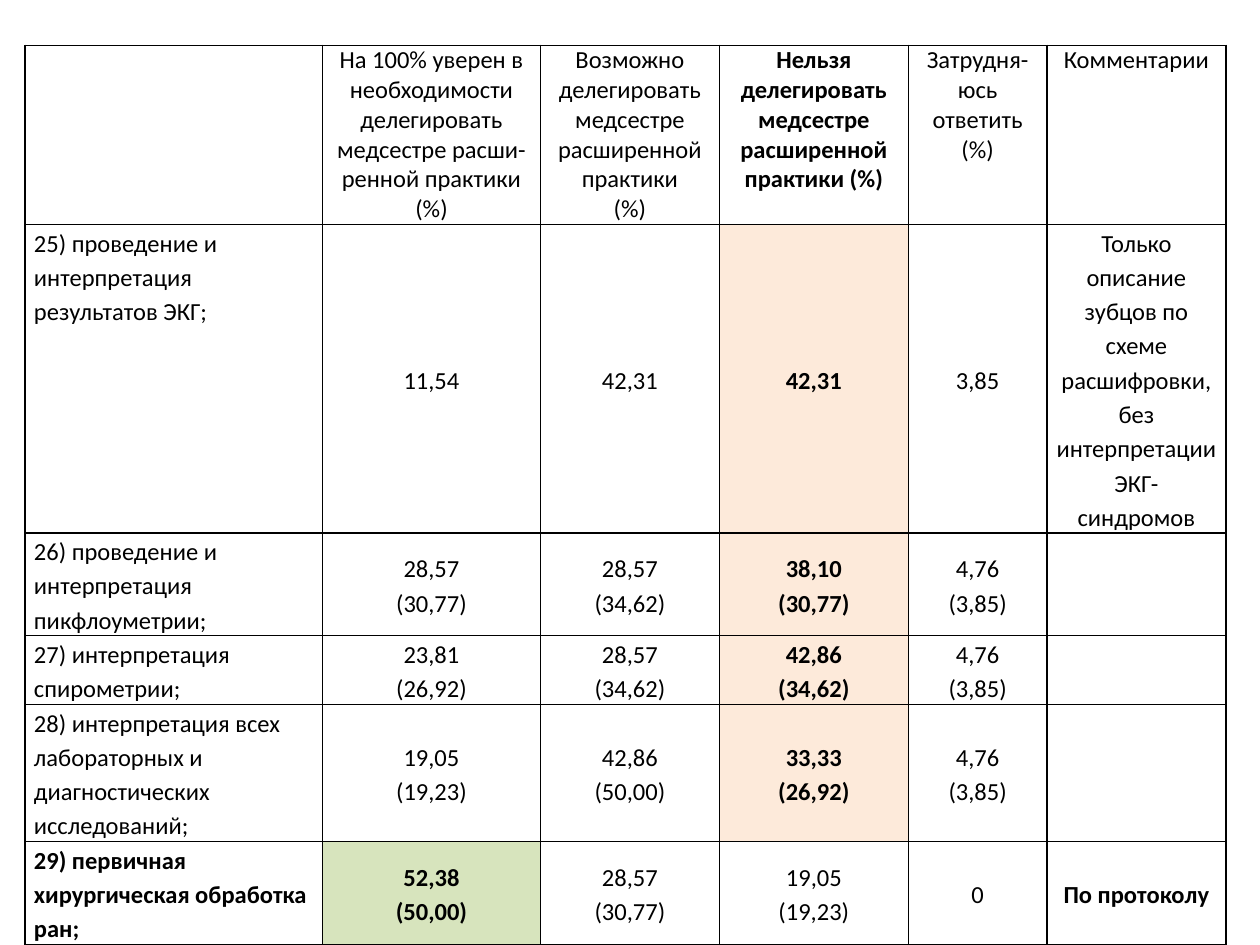
from lxml import etree
from pptx import Presentation
from pptx.dml.color import RGBColor
from pptx.enum import text
from pptx.oxml import ns
from pptx.util import Inches, Pt

BLACK, PEACH, GREEN = "000000", "FDEADA", "D7E4BD"

# Lines inside a cell are separated by "\n".
ROWS = [
    ["",
     "На 100% уверен в необходимости делегировать медсестре расши-ренной практики\n(%)",
     "Возможно делегировать медсестре расширенной практики\n(%)",
     "Нельзя делегировать медсестре расширенной практики (%)",
     "Затрудня-юсь ответить (%)",
     "Комментарии"],
    ["25) проведение и интерпретация результатов ЭКГ;",
     "11,54", "42,31", "42,31", "3,85",
     "Только описание зубцов по схеме расшифровки, без интерпретации ЭКГ-синдромов"],
    ["26) проведение и интерпретация пикфлоуметрии;",
     "28,57\n(30,77)", "28,57\n(34,62)", "38,10\n(30,77)", "4,76\n(3,85)", ""],
    ["27) интерпретация спирометрии;",
     "23,81\n(26,92)", "28,57\n(34,62)", "42,86\n(34,62)", "4,76\n(3,85)", ""],
    ["28) интерпретация всех лабораторных и диагностических исследований;",
     "19,05\n(19,23)", "42,86\n(50,00)", "33,33\n(26,92)", "4,76\n(3,85)", ""],
    ["29) первичная хирургическая обработка ран;",
     "52,38\n(50,00)", "28,57\n(30,77)", "19,05\n(19,23)", "0", "По протоколу"],
]
COLUMN_WIDTHS = [2.36, 1.73, 1.42, 1.5, 1.1, 1.42]
ROW_HEIGHTS = [1.42, 2.44, 0.81, 0.54, 1.08, 0.81]
REFUSED_COLUMN = 3
LAST_ROW = len(ROWS) - 1
FILLS = {(row, REFUSED_COLUMN): PEACH for row in range(1, LAST_ROW)}
FILLS[LAST_ROW, 1] = GREEN
BOLD = {*FILLS, (0, REFUSED_COLUMN), (LAST_ROW, 0), (LAST_ROW, 5)}


def rgb(value):
    return RGBColor.from_string(value)


def add_borders(cell):
    properties = cell._tc.get_or_add_tcPr()
    for side in ("lnL", "lnR", "lnT", "lnB"):
        line = etree.SubElement(properties, ns.qn(f"a:{side}"), w=str(Pt(1)))
        fill = etree.SubElement(line, ns.qn("a:solidFill"))
        etree.SubElement(fill, ns.qn("a:srgbClr"), val=BLACK)


def write_cell(cell, words, row, column):
    cell.margin_left = cell.margin_right = Inches(0.07)
    cell.margin_top = cell.margin_bottom = 0
    if row and column:
        cell.vertical_anchor = text.MSO_ANCHOR.MIDDLE
    for index, line in enumerate(words.split("\n")):
        frame = cell.text_frame
        para = frame.add_paragraph() if index else frame.paragraphs[0]
        para.alignment = text.PP_ALIGN.CENTER if column else text.PP_ALIGN.LEFT
        para.line_spacing = 1.15 if row else 1.0
        para.font.size = Pt(14)
        if line:
            span = para.add_run()
            span.text = line
            span.font.name = "Calibri"
            span.font.size = Pt(14)
            span.font.bold = (row, column) in BOLD
            span.font.color.rgb = rgb(BLACK)


def paint_cell(cell, color):
    if color:
        cell.fill.solid()
        cell.fill.fore_color.rgb = rgb(color)
    else:
        cell.fill.background()


def main():
    deck = Presentation()
    deck.slide_width, deck.slide_height = Inches(10), Inches(7.5)
    page = deck.slides.add_slide(deck.slide_layouts[6])
    table = page.shapes.add_table(
        len(ROWS), len(COLUMN_WIDTHS), Inches(0.2), Inches(0.36),
        Inches(sum(COLUMN_WIDTHS)), Inches(sum(ROW_HEIGHTS))).table
    table.first_row = table.horz_banding = False
    for column, width in zip(table.columns, COLUMN_WIDTHS):
        column.width = Inches(width)
    for row, height in zip(table.rows, ROW_HEIGHTS):
        row.height = Inches(height)
    for row, entries in enumerate(ROWS):
        for column, words in enumerate(entries):
            cell = table.cell(row, column)
            write_cell(cell, words, row, column)
            add_borders(cell)
            paint_cell(cell, FILLS.get((row, column)))
    deck.save("out.pptx")


if __name__ == "__main__":
    main()
